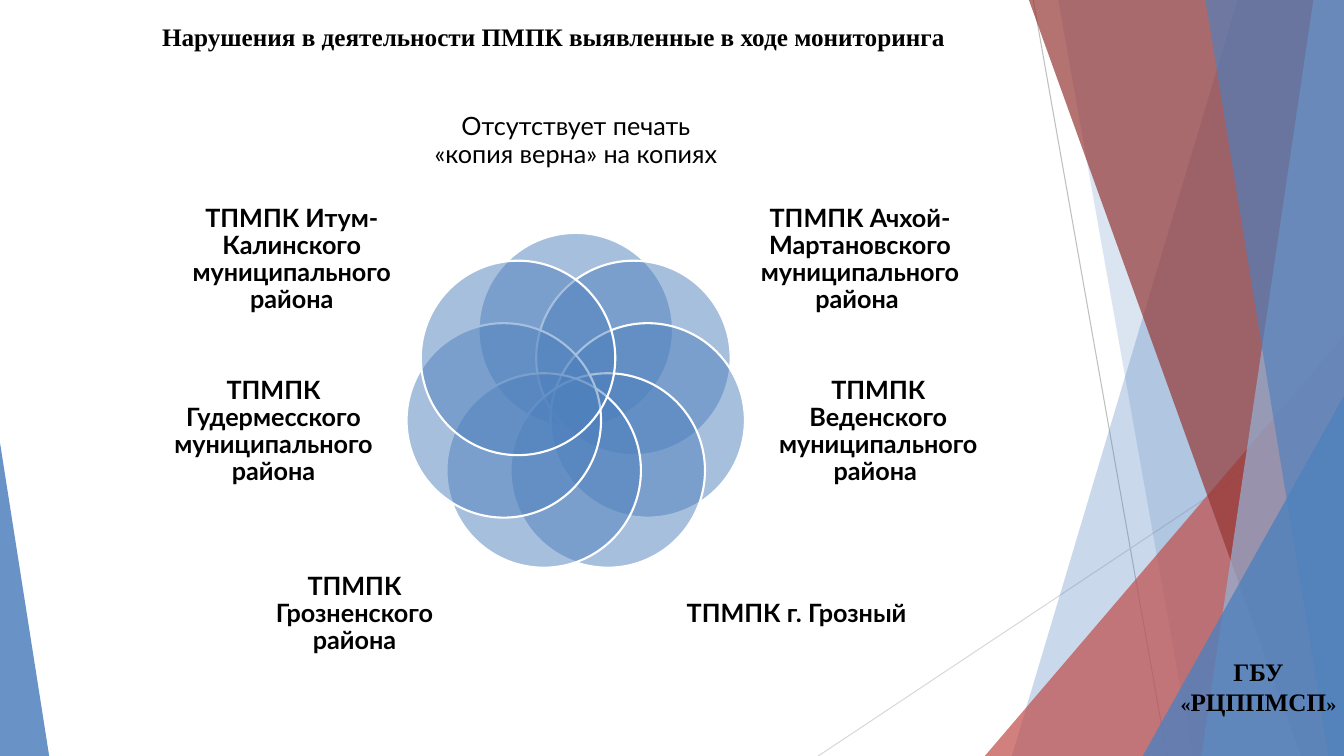
from math import cos, pi, sin

from pptx import Presentation
from pptx.dml.color import RGBColor as Rgb
from pptx.enum.shapes import MSO_CONNECTOR as Conn, MSO_SHAPE as Form
from pptx.enum.text import MSO_ANCHOR as Anchor, MSO_AUTO_SIZE as Fit, PP_ALIGN as Align
from pptx.oxml.ns import qn
from pptx.oxml.xmlchemy import OxmlElement as Node
from pptx.util import Cm, Pt

# Content: all lengths in centimetres
WIDE, HIGH = 33.87, 19.05
HUES = {"blue": "4F81BD", "pale": "95B3D7", "red": "C0504D", "wine": "953735",
        "grey": "BFBFBF", "mist": "D9D9D9", "white": "FFFFFF", "black": "000000"}
TITLE = "Нарушения в деятельности ПМПК выявленные в ходе мониторинга "
OFFICE = "ГБУ «РЦППМСП»"

# Label text, then left, top, width, height; clockwise from the top
LABELS = [
    ("Отсутствует печать «копия верна» на копиях", (10.82, 2.11, 7.39, 2.9)),
    ("ТПМПК Ачхой-Мартановского муниципального района ", (19.02, 4.9, 5.31, 3.3)),
    ("ТПМПК Веденского муниципального района ", (19.53, 9.12, 5.21, 3.53)),
    ("ТПМПК г. Грозный", (17.27, 13.87, 5.61, 3.23)),
    ("ТПМПК Грозненского района", (6.13, 13.87, 5.61, 3.23)),
    ("ТПМПК Гудермесского муниципального района", (4.29, 9.12, 5.21, 3.53)),
    ("ТПМПК Итум-Калинского муниципального района", (4.7, 4.9, 5.31, 3.3)),
]
MID_X, MID_Y, ORBIT, DISC = 14.51, 10.18, 1.86, 4.9

RAYS = [((26.04, 0), (29.41, HIGH), "grey"), ((WIDE, 10.24), (20.62, HIGH), "mist")]
# Bands: x at the top, x at the bottom; wedges: left, top, width, apex
DECOR = [
    ("band", (31.19, 25.5), "blue", 30),
    ("band", (26.67, 30.05), "blue", 20),
    ("wedge", (24.82, 8.46, 9.05, 1), "red", 72),
    ("band", (25.93, 32.79), "wine", 70),
    ("band", (33.1, 30.28), "pale", 70),
    ("band", (30.38, 33.48), "blue", 65),
    ("wedge", (28.8, 9.98, 5.07, 1), "blue", 80),
    ("wedge", (0, 11.15, 1.24, 0), "blue", 85),
]

deck = Presentation()
deck.slide_width, deck.slide_height = Cm(WIDE), Cm(HIGH)
slide = deck.slides.add_slide(deck.slide_layouts[6])
shapes = slide.shapes


def hue(name):
    return Rgb.from_string(HUES[name])


def paint(shape, name, share):
    """Fill with a see-through colour, without line or shadow."""
    shape.shadow.inherit = False
    shape.fill.solid()
    shape.fill.fore_color.rgb = hue(name)
    alpha = Node("a:alpha")
    alpha.set("val", str(share * 1000))
    shape._element.spPr.find(qn("a:solidFill"))[0].append(alpha)
    shape.line.fill.background()


def write(text, box, font, bold=True, space=1.0, inset=None):
    """Add a centred text box and return it with its run."""
    area = shapes.add_textbox(*map(Cm, box))
    frame = area.text_frame
    frame.word_wrap = True
    if inset is not None:
        frame.margin_left = frame.margin_right = Cm(inset)
        frame.margin_top = frame.margin_bottom = Cm(inset)
        frame.vertical_anchor = Anchor.MIDDLE
    para = frame.paragraphs[0]
    para.alignment, para.line_spacing = Align.CENTER, space
    run = para.add_run()
    run.text = text
    run.font.name, run.font.size, run.font.bold = font, Pt(18), bold
    run.font.color.rgb = hue("black")
    return frame, run


# Thin rays behind the bands
for start, end, name in RAYS:
    ray = shapes.add_connector(Conn.STRAIGHT, *map(Cm, start + end))
    ray.line.color.rgb, ray.line.width = hue(name), Pt(0.75)
    ray._element.spPr.append(Node("a:effectLst"))

# Bands and wedges at the slide's edges
for kind, place, name, share in DECOR:
    if kind == "band":
        top, foot = place
        build = shapes.build_freeform(Cm(top), Cm(0))
        build.add_line_segments([(Cm(x), Cm(y)) for x, y in
                                 ((WIDE, 0), (WIDE, HIGH), (foot, HIGH))], close=True)
        part = build.convert_to_shape()
    else:
        left, top, width, apex = place
        part = shapes.add_shape(Form.ISOSCELES_TRIANGLE, Cm(left), Cm(top),
                                Cm(width), Cm(HIGH - top))
        part.adjustments[0] = apex
    paint(part, name, share)

# Office name and title
frame, run = write(OFFICE, (29.34, 16.41, 4.75, 1.8), "Times New Roman")
frame.auto_size = Fit.SHAPE_TO_FIT_TEXT
run.font._element.set("cap", "small")
frame, run = write(TITLE, (3.73, 0.36, 20.6, 1.04), "Times New Roman", space=1.07)
frame.word_wrap, frame.auto_size = False, Fit.SHAPE_TO_FIT_TEXT
frame.paragraphs[0].space_after = Pt(8)

# Ring of overlapping discs with their labels
for i, (text, box) in enumerate(LABELS):
    turn = 2 * pi * i / len(LABELS)
    left = MID_X + ORBIT * sin(turn) - DISC / 2
    top = MID_Y - ORBIT * cos(turn) - DISC / 2
    disc = shapes.add_shape(Form.OVAL, Cm(left), Cm(top), Cm(DISC), Cm(DISC))
    paint(disc, "blue", 50)
    disc.line.color.rgb, disc.line.width = hue("white"), Pt(1.5)
    write(text, box, "Lato", bold=i > 0, space=0.9, inset=0)

deck.save("out.pptx")
